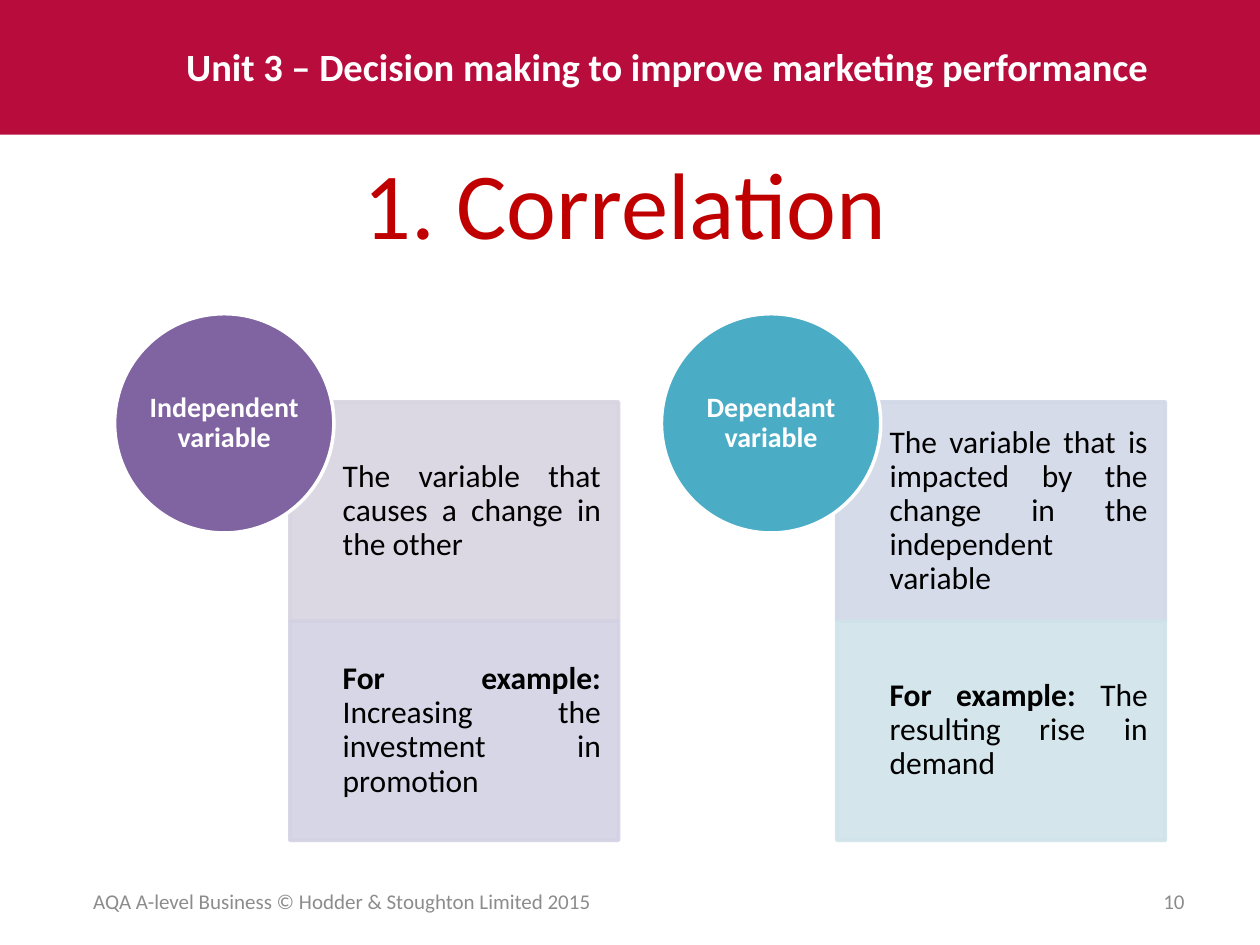
from lxml import etree
from pptx import Presentation
from pptx.dml.color import RGBColor
from pptx.enum.shapes import MSO_SHAPE as Shape
from pptx.enum.text import MSO_ANCHOR as Anchor, MSO_AUTO_SIZE as AutoSize, PP_ALIGN as Align
from pptx.oxml.ns import qn
from pptx.util import Inches, Pt

COLORS = {"banner": "B70C3C", "title": "C00000", "white": "FFFFFF",
          "black": "000000", "footer": "8C8C8C"}


def write(shape, runs, size, color, align, insets=(0.1, 0.05, 0.1, 0.05),
          anchor=Anchor.MIDDLE, spacing=None):
    """Fill a shape with one paragraph made of (text, bold) runs."""
    frame = shape.text_frame
    frame.word_wrap = True
    frame.auto_size = AutoSize.NONE
    frame.vertical_anchor = anchor
    for side, inset in zip(("left", "top", "right", "bottom"), insets):
        setattr(frame, f"margin_{side}", Inches(inset))
    para = frame.paragraphs[0]
    para.alignment = align
    para.line_spacing = spacing
    for text, bold in runs:
        span = para.add_run()
        span.text = text
        font_values = {"name": "Calibri", "size": Pt(size), "bold": bold}
        for name, value in font_values.items():
            setattr(span.font, name, value)
        span.font.color.rgb = RGBColor.from_string(color)


def draw(kind, at, fill, line=None, opacity=None):
    """Add a filled shape, with a 2 pt outline if a line colour is given."""
    shape = page.shapes.add_shape(kind, *map(Inches, at))
    shape.shadow.inherit = False
    shape.fill.solid()
    shape.fill.fore_color.rgb = RGBColor.from_string(fill)
    if line:
        shape.line.color.rgb = RGBColor.from_string(line)
        shape.line.width = Pt(2)
    else:
        shape.line.fill.background()
    if opacity:
        for color in shape.element.spPr.iter(qn("a:srgbClr")):
            etree.SubElement(color, qn("a:alpha"), val=str(opacity * 1000))
    return shape


deck = Presentation()
deck.slide_width, deck.slide_height = Inches(10), Inches(7.5)
page = deck.slides.add_slide(deck.slide_layouts[5])

# Banner and title
draw(Shape.RECTANGLE, (0, 0, 10, 1.07), COLORS["banner"])
unit = page.shapes.add_textbox(*map(Inches, (1.38, 0.29, 8.03, 0.47)))
write(unit, [("Unit 3 – Decision making to improve marketing performance", True)],
      22, COLORS["white"], Align.LEFT, anchor=Anchor.TOP)

title = page.shapes.title
title.left, title.top, title.width, title.height = map(Inches, (0.2, 1.15, 9.52, 0.91))
write(title, [("1. Correlation", False)], 54, COLORS["title"], Align.CENTER)

# One column per variable: two stacked cards with a circle over the corner
variables = [
    ("Independent variable", "8064A2", [
        ("D8D3E0", [("The variable that causes a change in the other", False)]),
        ("D2D2E4", [("For example: ", True),
                    ("Increasing the investment in promotion", False)])]),
    ("Dependant variable", "4BACC6", [
        ("D1D8E7", [("The variable that is impacted by the change in the "
                     "independent variable", False)]),
        ("D0E3EA", [("For example: ", True),
                    ("The resulting rise in demand", False)])]),
]
SIDE = 1.74  # card height and circle diameter
for column, (name, circle_color, cards) in enumerate(variables):
    left = 0.91 + column * 4.34
    for row, (card_color, runs) in enumerate(cards):
        card = draw(Shape.RECTANGLE, (left + 1.39, 3.19 + row * SIDE, 2.61, SIDE),
                    card_color, card_color, opacity=90)
        write(card, runs, 18, COLORS["black"], Align.JUSTIFY,
              insets=(0.42, 0.14, 0.14, 0.14), spacing=0.9)
    circle = draw(Shape.OVAL, (left, 2.49, SIDE, SIDE), circle_color, COLORS["white"])
    write(circle, [(name, True)], 16, COLORS["white"], Align.CENTER,
          insets=(0, 0, 0, 0), spacing=0.9)

# Footer
footers = [
    (0.51, 4.41, "AQA A-level Business © Hodder & Stoughton Limited 2015", Align.CENTER),
    (7.17, 2.33, "10", Align.RIGHT),
]
for left, width, text, align in footers:
    box = page.shapes.add_textbox(*map(Inches, (left, 6.95, width, 0.4)))
    write(box, [(text, False)], 12, COLORS["footer"], align)

deck.save("out.pptx")
